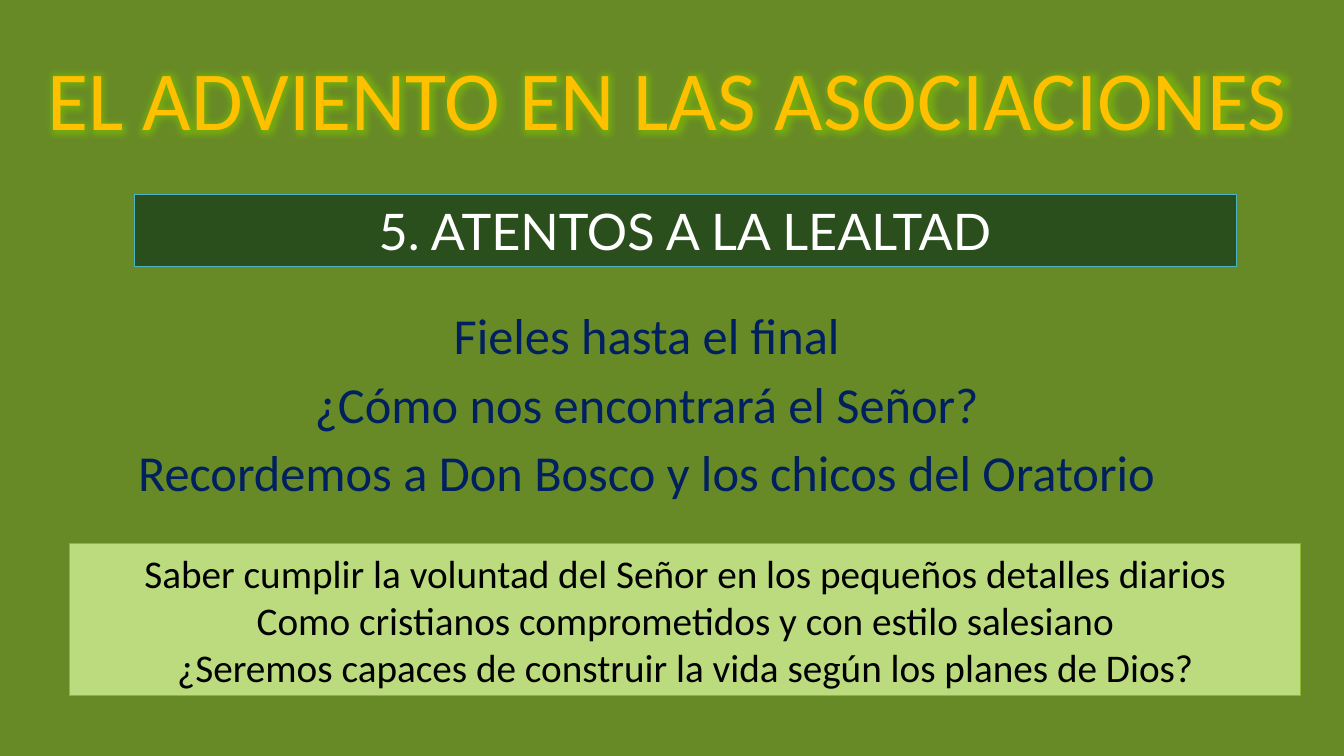
from dataclasses import dataclass

from lxml import etree
from pptx import Presentation
from pptx.dml.color import RGBColor
from pptx.enum.shapes import MSO_SHAPE
from pptx.enum.text import MSO_ANCHOR, PP_ALIGN
from pptx.oxml.ns import qn
from pptx.util import Inches, Pt

RECTANGLE = MSO_SHAPE.RECTANGLE
CENTER = PP_ALIGN.CENTER
TOP, MIDDLE, BOTTOM = MSO_ANCHOR.TOP, MSO_ANCHOR.MIDDLE, MSO_ANCHOR.BOTTOM


@dataclass(frozen=True)
class Theme:
    background: str = "678A26"
    title: str = "FFC000"
    glow: str = "7FC000"
    body: str = "002060"
    banner_fill: str = "2A4F1C"
    banner_line: str = "4AB5C4"
    banner_text: str = "FFFFFF"
    panel_fill: str = "BBDB7E"
    panel_line: str = "8AB833"
    panel_text: str = "000000"
    font: str = "Calibri"
    banner_font: str = "Lato"
    title_size: int = 60
    heading_size: int = 36
    panel_size: int = 28
    line_width: float = 0.5


THEME = Theme()


def rgb(value):
    return RGBColor.from_string(value)


def write_lines(frame, lines, size, color, font=THEME.font, anchor=TOP,
                line_spacing=1.0, space_before=0):
    """Fill the frame with one centred paragraph per line; return the runs."""
    frame.word_wrap = True
    frame.vertical_anchor = anchor
    runs = []
    for index, line in enumerate(lines):
        paragraph = frame.add_paragraph() if index else frame.paragraphs[0]
        paragraph.alignment = CENTER
        paragraph.line_spacing = line_spacing
        paragraph.space_before = Pt(space_before)
        run = paragraph.add_run()
        run.text = line
        run.font.size = Pt(size)
        run.font.name = font
        run.font.color.rgb = rgb(color)
        runs.append(run)
    return runs


def add_glow(run, color, radius, opacity):
    effects = etree.Element(qn("a:effectLst"))
    glow = etree.SubElement(effects, qn("a:glow"), rad=str(Pt(radius)))
    tint = etree.SubElement(glow, qn("a:srgbClr"), val=color)
    etree.SubElement(tint, qn("a:alpha"), val=str(opacity * 1000))
    run.font.fill
    run.font._element.find(qn("a:solidFill")).addnext(effects)


def add_title(slide, box, text):
    title = slide.shapes.add_textbox(*map(Inches, box))
    run, = write_lines(title.text_frame, [text], THEME.title_size, THEME.title,
                       anchor=BOTTOM, line_spacing=0.9)
    add_glow(run, THEME.glow, radius=11, opacity=60)


def add_reflections(slide, box, lines):
    reflections = slide.shapes.add_textbox(*map(Inches, box))
    write_lines(reflections.text_frame, lines, THEME.heading_size, THEME.body,
                line_spacing=0.9, space_before=10)


def add_panel(slide, box, fill, line):
    panel = slide.shapes.add_shape(RECTANGLE, *map(Inches, box))
    panel.shadow.inherit = False
    panel.fill.solid()
    panel.fill.fore_color.rgb = rgb(fill)
    panel.line.color.rgb = rgb(line)
    panel.line.width = Pt(THEME.line_width)
    return panel


def add_banner(slide, box, text):
    banner = add_panel(slide, box, THEME.banner_fill, THEME.banner_line)
    write_lines(banner.text_frame, [text], THEME.heading_size,
                THEME.banner_text, font=THEME.banner_font, anchor=MIDDLE)


def add_commitments(slide, box, lines):
    commitments = add_panel(slide, box, THEME.panel_fill, THEME.panel_line)
    write_lines(commitments.text_frame, lines, THEME.panel_size,
                THEME.panel_text, anchor=MIDDLE)


def main():
    deck = Presentation()
    deck.slide_width, deck.slide_height = Inches(13.33), Inches(7.5)
    slide = deck.slides.add_slide(deck.slide_layouts[6])
    slide.background.fill.solid()
    slide.background.fill.fore_color.rgb = rgb(THEME.background)

    add_title(slide, (0.33, 0.32, 12.57, 1.2),
              "EL ADVIENTO EN LAS ASOCIACIONES")
    add_reflections(slide, (0.33, 3.04, 12.17, 2.11), [
        "Fieles hasta el final",
        "¿Cómo nos encontrará el Señor?",
        "Recordemos a Don Bosco y los chicos del Oratorio",
    ])
    add_banner(slide, (1.33, 1.93, 10.93, 0.71), "5. ATENTOS A LA LEALTAD")
    add_commitments(slide, (0.69, 5.39, 12.21, 1.51), [
        "Saber cumplir la voluntad del Señor en los pequeños detalles diarios",
        "Como cristianos comprometidos y con estilo salesiano",
        "¿Seremos capaces de construir la vida según los planes de Dios?",
    ])
    deck.save("out.pptx")


if __name__ == "__main__":
    main()
